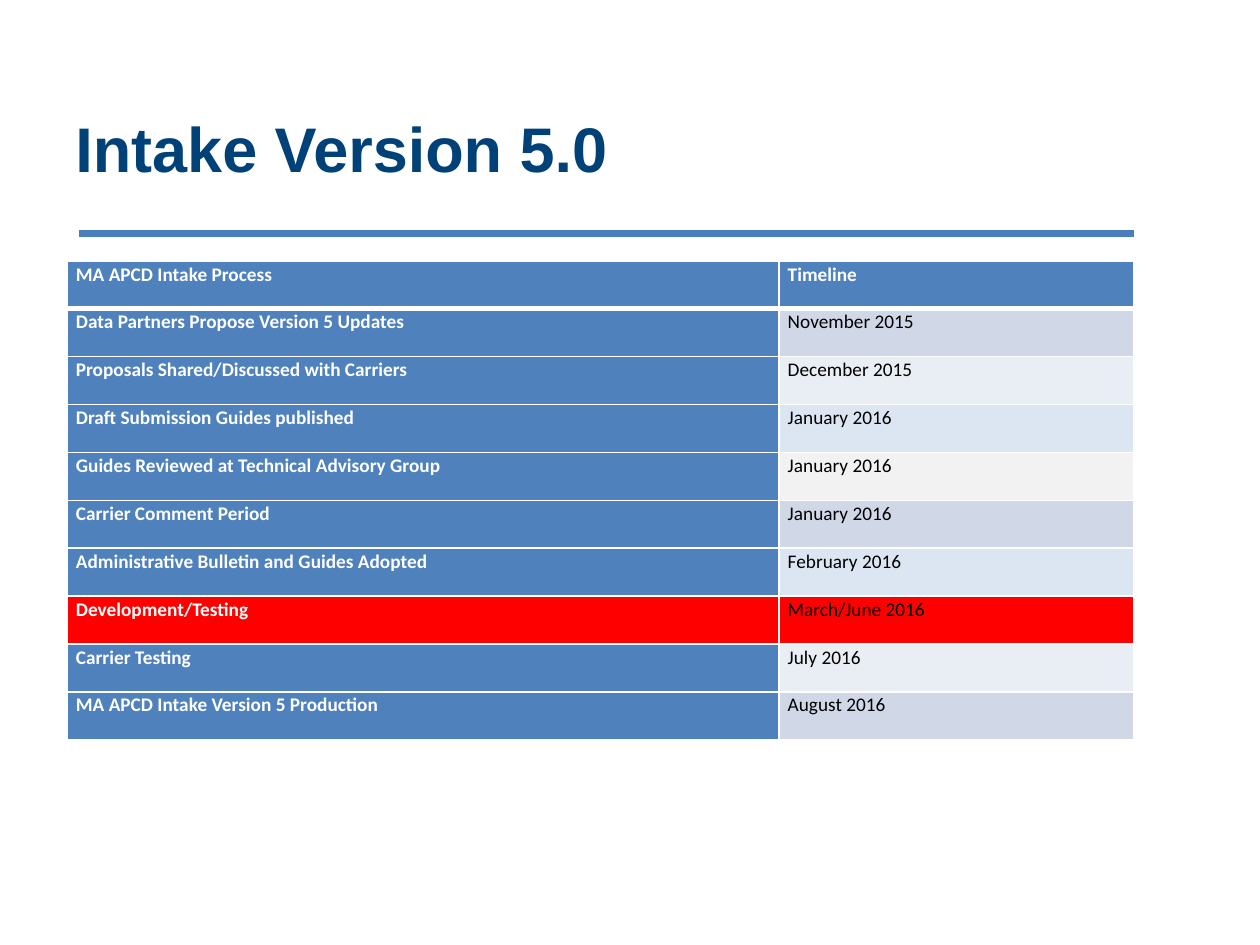
from lxml import etree
from pptx import Presentation, util as u
from pptx.dml.color import RGBColor
from pptx.enum import shapes, text
from pptx.oxml.ns import qn

NAVY = RGBColor(0x00, 0x41, 0x78)
RULE_BLUE = RGBColor(0x4B, 0x7E, 0xBC)
BLUE = RGBColor(0x4F, 0x81, 0xBD)
BAND_DARK = RGBColor(0xD0, 0xD8, 0xE8)
BAND_LIGHT = RGBColor(0xE9, 0xED, 0xF4)
PALE_BLUE = RGBColor(0xDC, 0xE6, 0xF2)
PALE_GRAY = RGBColor(0xF2, 0xF2, 0xF2)
RED = RGBColor(0xFF, 0x00, 0x00)
WHITE = RGBColor(0xFF, 0xFF, 0xFF)
BLACK = RGBColor(0x00, 0x00, 0x00)

TIMELINE = [
    ("MA APCD Intake Process", "Timeline", BLUE, BLUE),
    ("Data Partners Propose Version 5 Updates", "November 2015", BLUE, BAND_DARK),
    ("Proposals Shared/Discussed with Carriers", "December 2015", BLUE, BAND_LIGHT),
    ("Draft Submission Guides published", "January 2016", BLUE, PALE_BLUE),
    ("Guides Reviewed at Technical Advisory Group", "January 2016", BLUE, PALE_GRAY),
    ("Carrier Comment Period", "January 2016", BLUE, BAND_DARK),
    ("Administrative Bulletin and Guides Adopted", "February 2016", BLUE, PALE_BLUE),
    ("Development/Testing", "March/June 2016", RED, RED),
    ("Carrier Testing", "July 2016", BLUE, BAND_LIGHT),
    ("MA APCD Intake Version 5 Production", "August 2016", BLUE, BAND_DARK),
]
COLUMN_WIDTHS = (14.35, 7.16)


def add_run(paragraph, content, font_name, size, color, bold):
    run = paragraph.add_run()
    run.text = content
    run.font.name = font_name
    run.font.size = u.Pt(size)
    run.font.color.rgb = color
    run.font.bold = bold


def add_title(slide, content):
    shape = slide.shapes.add_textbox(u.Cm(1.27), u.Cm(1.57), u.Cm(21.59), u.Cm(2.82))
    frame = shape.text_frame
    frame.word_wrap = True
    frame.vertical_anchor = text.MSO_ANCHOR.MIDDLE
    add_run(frame.paragraphs[0], content, "Arial", 36, NAVY, True)


def add_rule(slide):
    connector = slide.shapes.add_connector(
        shapes.MSO_CONNECTOR.STRAIGHT, u.Cm(1.6), u.Cm(4.7), u.Cm(22.86), u.Cm(4.7))
    connector.line.color.rgb = RULE_BLUE
    connector.line.width = u.Pt(4)
    properties = connector._element.find(qn("p:spPr"))
    etree.SubElement(properties, qn("a:effectLst"))


def set_border(cell, side, width):
    properties = cell._tc.get_or_add_tcPr()
    line = etree.SubElement(properties, qn(f"a:ln{side}"), w=str(u.Pt(width)))
    fill = etree.SubElement(line, qn("a:solidFill"))
    etree.SubElement(fill, qn("a:srgbClr"), val=str(WHITE))


def fill_cell(cell, content, fill, is_header, is_bold):
    cell.margin_left = cell.margin_right = u.Cm(0.18)
    cell.margin_top = cell.margin_bottom = 0
    for side in "LRTB":
        set_border(cell, side, 3 if is_header and side == "B" else 1)
    cell.fill.solid()
    cell.fill.fore_color.rgb = fill
    paragraph = cell.text_frame.paragraphs[0]
    paragraph.line_spacing = 1.07
    add_run(paragraph, content, "Calibri", 11, WHITE if is_bold else BLACK, is_bold)


def add_timeline_table(slide):
    table = slide.shapes.add_table(
        len(TIMELINE), len(COLUMN_WIDTHS), u.Cm(1.35), u.Cm(5.26),
        u.Cm(sum(COLUMN_WIDTHS)), u.Cm(9.65)).table
    table.horz_banding = False
    for column, width in zip(table.columns, COLUMN_WIDTHS):
        column.width = u.Cm(width)
    for row, (step, date, step_fill, date_fill) in enumerate(TIMELINE):
        is_header = row == 0
        fill_cell(table.cell(row, 0), step, step_fill, is_header, True)
        fill_cell(table.cell(row, 1), date, date_fill, is_header, is_header)
        if row == 1:
            for cell in table.rows[row].cells:
                cell._tc.tcPr.find(qn("a:lnT")).set("w", str(u.Pt(3)))


def main():
    presentation = Presentation()
    presentation.slide_width = u.Cm(25.4)
    presentation.slide_height = u.Cm(19.05)
    slide = presentation.slides.add_slide(presentation.slide_layouts[6])
    add_rule(slide)
    add_title(slide, "Intake Version 5.0")
    add_timeline_table(slide)
    presentation.save("out.pptx")


if __name__ == "__main__":
    main()
